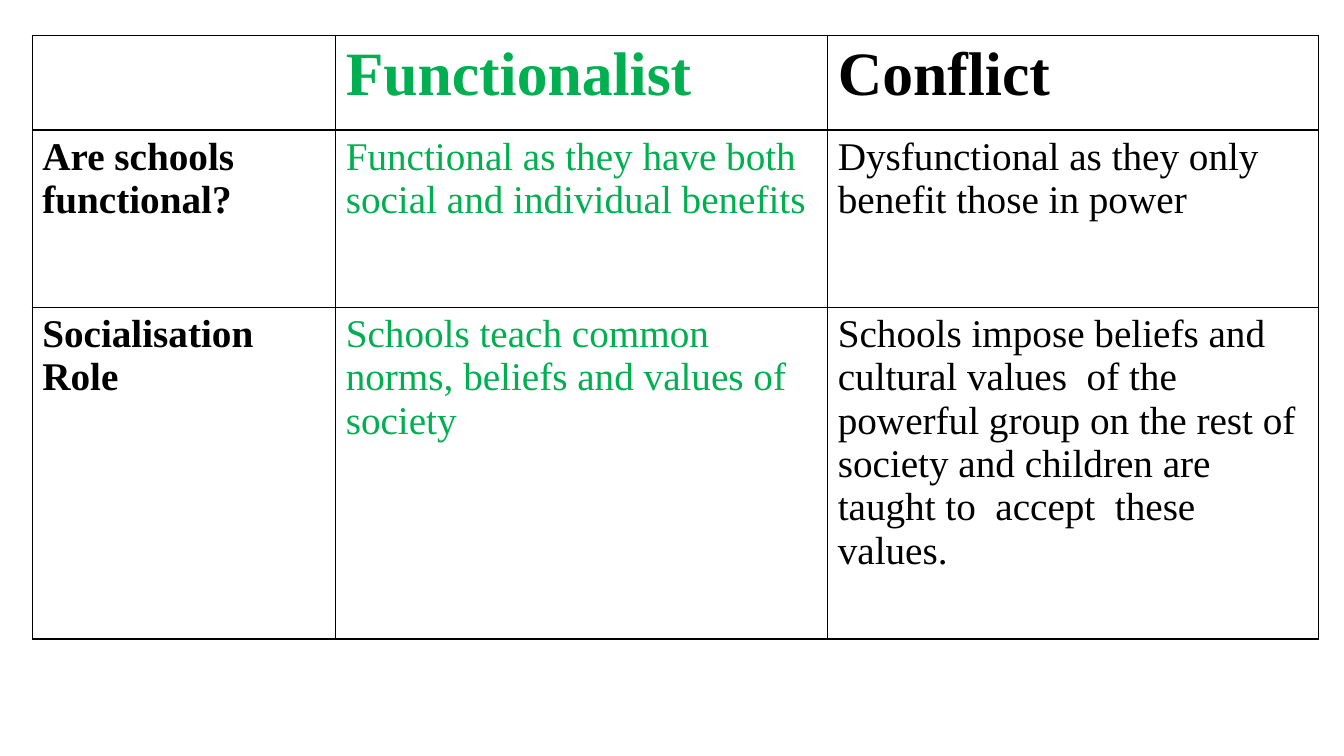
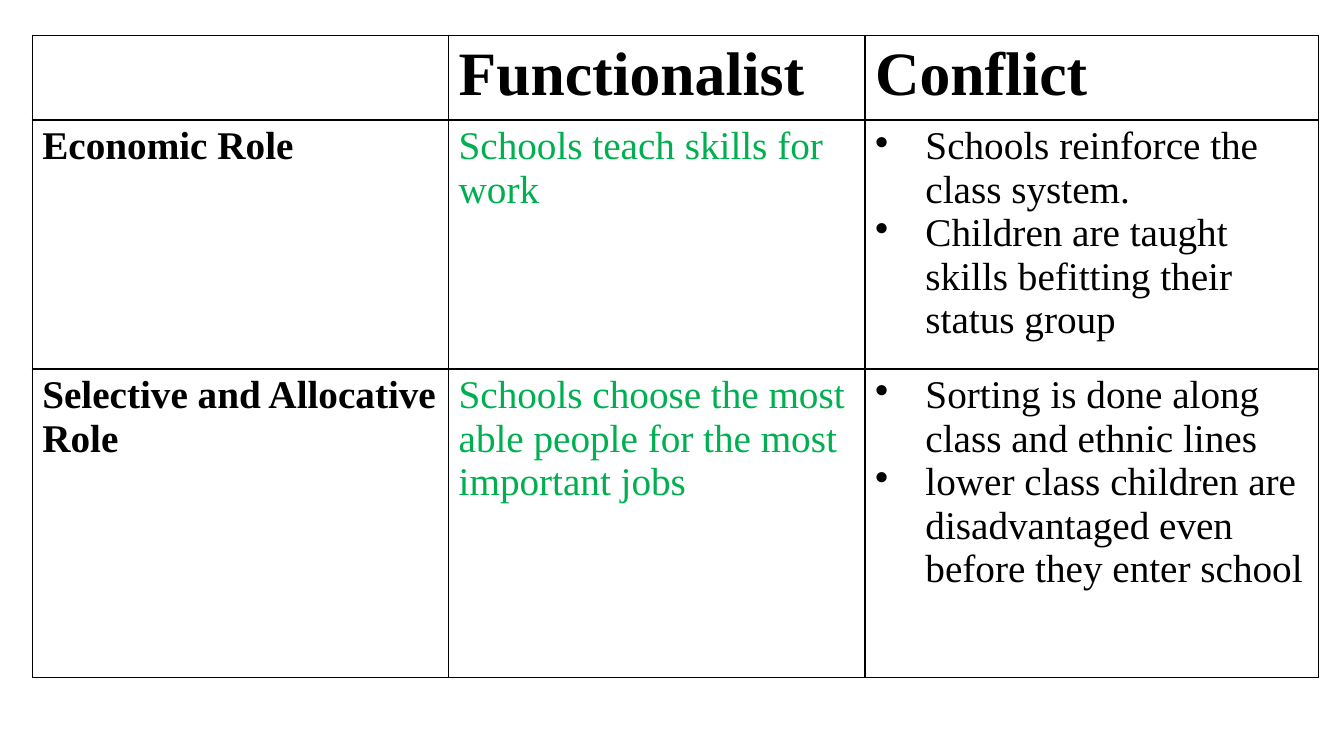
import pptx
import pptx.util
import pptx.dml.color
import pptx.oxml
import pptx.oxml.ns

HEX = {"ink": "000000", "green": "00B050", "paper": "FFFFFF"}
HEAD = {"size": pptx.util.Pt(44), "bold": True}
LABEL = {"size": pptx.util.Pt(28), "bold": True}
PLAIN = {"size": pptx.util.Pt(28), "bold": False}
LEFT, TOP = 2.4, 4.67  # percent of the slide


class Deck:
    """Holds the style and the current slide; lengths are percent of the slide."""

    face = "Times New Roman"
    rule = pptx.util.Pt(1)
    indent = pptx.util.Inches(0.5)

    def __init__(self):
        self.prs = pptx.Presentation()
        self.prs.slide_width = pptx.util.Inches(13.33)
        self.prs.slide_height = pptx.util.Inches(7.5)

    def page(self):
        self.slide = self.prs.slides.add_slide(self.prs.slide_layouts[6])

    def across(self, share):
        return round(self.prs.slide_width * share / 100)

    def down(self, share):
        return round(self.prs.slide_height * share / 100)

    def frame(self, cell):
        """Give a cell its four borders and its fill."""
        props = cell._tc.get_or_add_tcPr()
        for side in "LRTB":
            props.append(pptx.oxml.parse_xml(
                f'<a:ln{side} {pptx.oxml.ns.nsdecls("a")} w="{self.rule}"><a:solidFill>'
                f'<a:srgbClr val="{HEX["ink"]}"/></a:solidFill></a:ln{side}>'))
        cell.fill.solid()
        cell.fill.fore_color.rgb = pptx.dml.color.RGBColor.from_string(HEX["paper"])

    def bullet(self, para):
        props = para._p.get_or_add_pPr()
        props.set("marL", str(self.indent))
        props.set("indent", str(-self.indent))
        props.append(pptx.oxml.parse_xml(
            f'<a:buChar {pptx.oxml.ns.nsdecls("a")} char="•"/>'))

    def label(self, cell, text, style, tint):
        """Fill a cell with one text, or with a list of bullet points."""
        listed = isinstance(text, list)
        lines = text if listed else [text]
        cell.text = "\n".join(lines)
        for para in cell.text_frame.paragraphs:
            if listed:
                self.bullet(para)
            for run in para.runs:
                for name, value in {"name": self.face, **style}.items():
                    setattr(run.font, name, value)
                run.font.color.rgb = pptx.dml.color.RGBColor.from_string(HEX[tint])

    def table(self, cols, rows, texts, title="ink"):
        """Draw a comparison table; title is the tint of the second heading."""
        table = self.slide.shapes.add_table(
            len(rows), len(cols), self.across(LEFT), self.down(TOP),
            self.across(sum(cols)), self.down(sum(rows))).table
        table.first_row = table.horz_banding = False
        for col, share in zip(table.columns, cols):
            col.width = self.across(share)
        for row, share in zip(table.rows, rows):
            row.height = self.down(share)
        heads = ["", "Functionalist", "Conflict"]
        for r, line in enumerate([heads] + texts):
            for c, text in enumerate(line):
                cell = table.cell(r, c)
                self.frame(cell)
                if text:
                    style = HEAD if r == 0 else LABEL if c == 0 else PLAIN
                    tint = "ink" if c != 1 else title if r == 0 else "green"
                    self.label(cell, text, style, tint)


def main():
    deck = Deck()
    deck.page()
    deck.table([22.58, 36.61, 36.53], [12.53, 23.47, 43.87], [
        ["Are schools functional?",
         "Functional as they have both social and individual benefits",
         "Dysfunctional as they only benefit those in power"],
        ["Socialisation Role",
         "Schools teach common  norms, beliefs and values of society",
         "Schools impose beliefs and cultural values  of the powerful group on the "
         "rest of society and children are taught to  accept  these values."],
    ], title="green")
    deck.page()
    deck.table([30.98, 30.98, 33.76], [11.2, 32.93, 40.8], [
        ["Economic Role",
         "Schools teach skills for work",
         ["Schools reinforce the class system.",
          "Children are taught skills befitting their status group"]],
        ["Selective and Allocative Role",
         "Schools choose the most able people for the most important jobs",
         ["Sorting is done along class and ethnic lines",
          "lower class children are disadvantaged even before they enter school"]],
    ])
    deck.prs.save("out.pptx")


if __name__ == "__main__":
    main()
